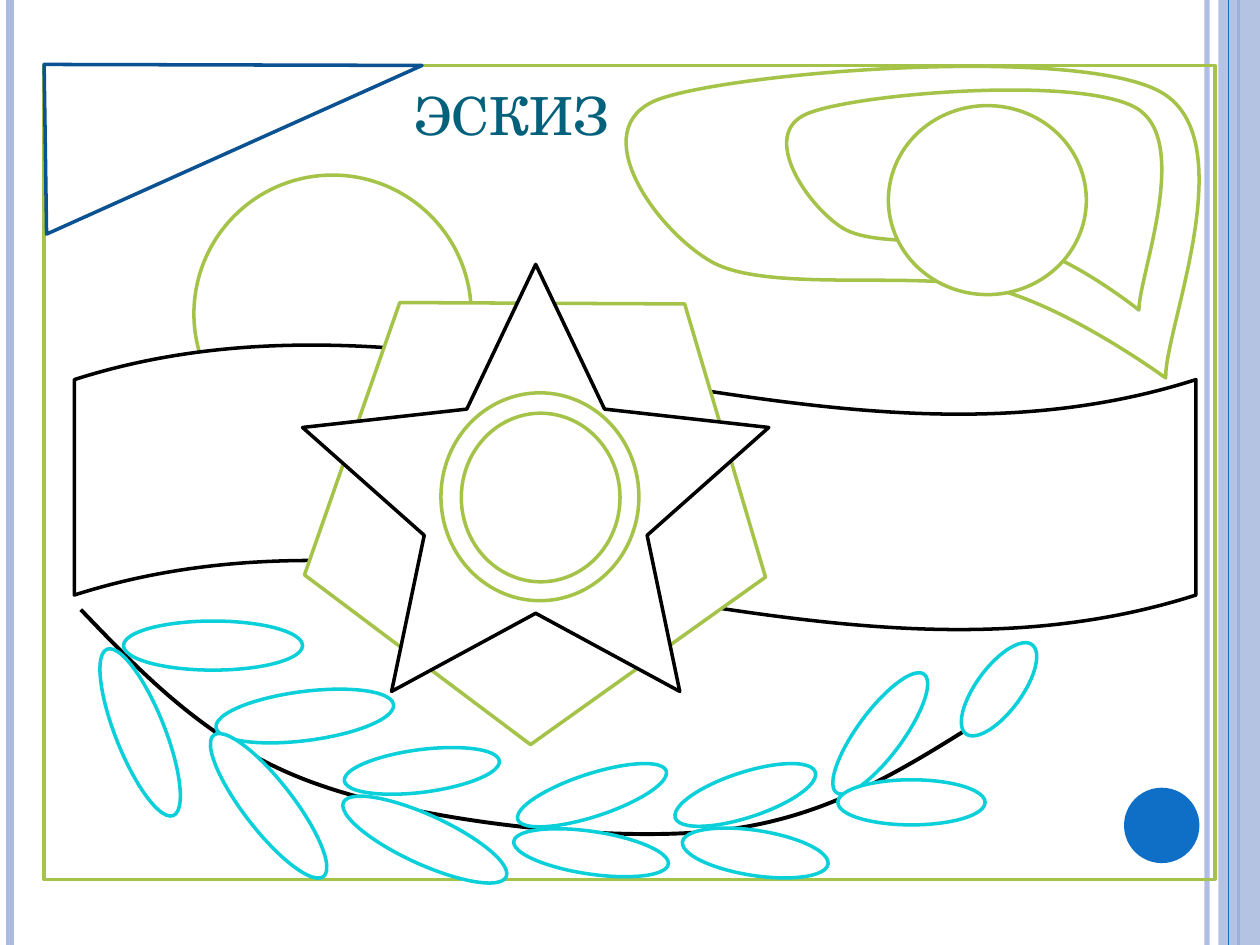
"""Build the sketch slide: a star on a ribbon, a carnation and a laurel branch."""
import pptx
import pptx.util
import pptx.dml.color
import pptx.enum.shapes
import pptx.enum.text
import pptx.oxml
import pptx.oxml.ns

Cm, Pt = pptx.util.Cm, pptx.util.Pt
SHAPE = pptx.enum.shapes.MSO_SHAPE
WIDTH, HEIGHT = 25.4, 19.05

THEME = {
    "white": "FFFFFF", "black": "000000", "green": "A5C249", "cyan": "0BD0D9",
    "navy": "0B5292", "blue": "0F6FC6", "pale": "ABBBDF", "title": "04617B",
    "font": "TeX Gyre Schola", "title_size": 30, "outline": 2, "branch": 2.25,
}

TITLE = ("ЭСКИЗ", (8.1, 1.52, 4.83, 1.55))
# x, colour, weight, opacity
STRIPES_BELOW = [(24.33, "pale", 3, 93), (0.2, "pale", 4.5, 100), (24.97, "blue", 1.5, 100)]
STRIPES_ABOVE = [(24.77, "blue", 0.75, 100)]
SIDE_BAND = (24.56, 0, 0.84, HEIGHT)
DOT = (22.66, 15.88, 1.52, 1.52)

EMBLEM = [
    (SHAPE.OVAL, (3.91, 3.53, 5.59, 5.59), 0, "white", "green"),
    (SHAPE.WAVE, (1.5, 6.93, 22.61, 5.79), 0, "white", "black"),
    (SHAPE.REGULAR_PENTAGON, (6.5, 5.23, 9.22, 8.97), 36.9, "white", "green"),
    (SHAPE.RECTANGLE, (0.89, 1.32, 23.6, 16.41), 0, None, "green"),
    (SHAPE.STAR_5_POINT, (6.1, 5.33, 9.4, 8.61), 0, "white", "black"),
    (SHAPE.OVAL, (8.89, 7.92, 3.99, 4.19), 0, "white", "green"),
    (SHAPE.OVAL, (9.3, 8.33, 3.2, 3.4), 0, "white", "green"),
]
STAR_DEPTH = 0.239

LEAF_SIZES = {"long": (3.61, 0.99), "middle": (3.15, 0.86),
              "short": (2.97, 0.91), "tip": (2.24, 0.91)}
LEAVES = [
    (2.49, 12.52, "long", 0), (4.34, 13.94, "long", 352.7),
    (6.93, 15.11, "middle", 352.7), (10.36, 15.6, "middle", 341.9),
    (13.54, 15.57, "short", 341.9), (16.26, 14.33, "short", 306.5),
    (19.02, 13.44, "tip", 306.5), (1.02, 14.27, "long", 68.3),
    (3.61, 15.75, "long", 52.2), (6.76, 16.43, "long", 24.6),
    (10.34, 16.76, "middle", 8.4), (13.74, 16.74, "short", 8.7),
    (16.89, 15.72, "short", 0),
]

BRANCH = [(1.63, 12.29), (2.97, 13.69), (4.32, 15.09), (6.43, 15.82),
          (8.53, 16.56), (12.12, 16.97), (14.33, 16.76),
          (16.54, 16.56), (18.11, 15.57), (19.69, 14.58)]
CORNER = [(0.89, 1.3), (0.94, 4.72), (8.51, 1.32)]
PETALS = [
    [(13.26, 2.01), (11.76, 2.59), (13.23, 4.65), (14.35, 5.28),
     (15.49, 5.92), (18.52, 5.44), (20.04, 5.82),
     (21.56, 6.2), (23.5, 7.62), (23.5, 7.62),
     (23.47, 6.65), (25.1, 2.79), (23.39, 1.85),
     (21.69, 0.91), (14.76, 1.45), (13.26, 2.01)],
    [(16.28, 2.29), (15.29, 2.69), (16.26, 4.14), (16.99, 4.6),
     (17.73, 5.05), (19.71, 4.7), (20.73, 4.98),
     (21.72, 5.26), (22.96, 6.25), (22.96, 6.25),
     (22.96, 5.56), (24.03, 2.84), (22.91, 2.18),
     (21.79, 1.52), (17.27, 1.88), (16.28, 2.29)],
]
FLOWER_HEART = (17.91, 2.13, 3.99, 3.81)


def rgb(name):
    return pptx.dml.color.RGBColor.from_string(THEME[name])


def set_opacity(s, percent):
    color = s.element.spPr.find(".//" + pptx.oxml.ns.qn("a:srgbClr"))
    alpha = pptx.oxml.parse_xml(
        f'<a:alpha {pptx.oxml.ns.nsdecls("a")} val="{percent * 1000}"/>')
    color.append(alpha)


def paint(s, fill, line, weight=THEME["outline"]):
    s.shadow.inherit = False
    if fill:
        s.fill.solid()
        s.fill.fore_color.rgb = rgb(fill)
    else:
        s.fill.background()
    if line:
        s.line.color.rgb = rgb(line)
        s.line.width = Pt(weight)
    else:
        s.line.fill.background()


def add_figure(shapes, kind, box, rotation, fill, line):
    s = shapes.add_shape(kind, *map(Cm, box))
    s.rotation = rotation
    paint(s, fill, line)
    return s


def add_outline(shapes, points, closed):
    points = [(Cm(x), Cm(y)) for x, y in points]
    builder = shapes.build_freeform(*points[0])
    builder.add_line_segments(points[1:], close=closed)
    return builder.convert_to_shape()


def add_curve(shapes, points, closed):
    """Turn each three segments of an outline into one cubic curve."""
    qn = pptx.oxml.ns.qn
    s = add_outline(shapes, points, closed)
    segments = list(s.element.iter(qn("a:lnTo")))
    for i in range(0, len(segments), 3):
        curve = pptx.oxml.parse_xml(f'<a:cubicBezTo {pptx.oxml.ns.nsdecls("a")}/>')
        segments[i].addprevious(curve)
        for segment in segments[i:i + 3]:
            curve.append(segment[0])
            segment.getparent().remove(segment)
    return s


def add_stripes(shapes, stripes):
    for x, color, weight, opacity in stripes:
        s = shapes.add_connector(pptx.enum.shapes.MSO_CONNECTOR.STRAIGHT,
                                 Cm(x), 0, Cm(x), Cm(HEIGHT))
        s.line.color.rgb = rgb(color)
        s.line.width = Pt(weight)
        s.element.spPr.append(
            pptx.oxml.parse_xml(f'<a:effectLst {pptx.oxml.ns.nsdecls("a")}/>'))
        if opacity < 100:
            set_opacity(s, opacity)


def add_title(shapes):
    text, box = TITLE
    tf = shapes.add_textbox(*map(Cm, box)).text_frame
    tf.word_wrap = True
    tf.vertical_anchor = pptx.enum.text.MSO_ANCHOR.BOTTOM
    tf.text = text
    r = tf.paragraphs[0].runs[0]
    r.font.name = THEME["font"]
    r.font.size = Pt(THEME["title_size"])
    r.font.color.rgb = rgb("title")
    r.font._element.set("cap", "small")


def main():
    prs = pptx.Presentation()
    prs.slide_width, prs.slide_height = Cm(WIDTH), Cm(HEIGHT)
    shapes = prs.slides.add_slide(prs.slide_layouts[6]).shapes

    add_stripes(shapes, STRIPES_BELOW)
    band = add_figure(shapes, SHAPE.RECTANGLE, SIDE_BAND, 0, "pale", None)
    set_opacity(band, 87)
    add_stripes(shapes, STRIPES_ABOVE)
    add_figure(shapes, SHAPE.OVAL, DOT, 0, "blue", None)

    for kind, *rest in EMBLEM:
        s = add_figure(shapes, kind, *rest)
        if kind == SHAPE.STAR_5_POINT:
            s.adjustments[0] = STAR_DEPTH

    paint(add_curve(shapes, BRANCH, False), None, "black", THEME["branch"])
    for x, y, size, rotation in LEAVES:
        add_figure(shapes, SHAPE.OVAL, (x, y, *LEAF_SIZES[size]), rotation, "white", "cyan")

    paint(add_outline(shapes, CORNER, True), "white", "navy")
    for petal in PETALS:
        paint(add_curve(shapes, petal, True), "white", "green")
    add_figure(shapes, SHAPE.OVAL, FLOWER_HEART, 0, "white", "green")
    add_title(shapes)
    prs.save("out.pptx")


if __name__ == "__main__":
    main()
